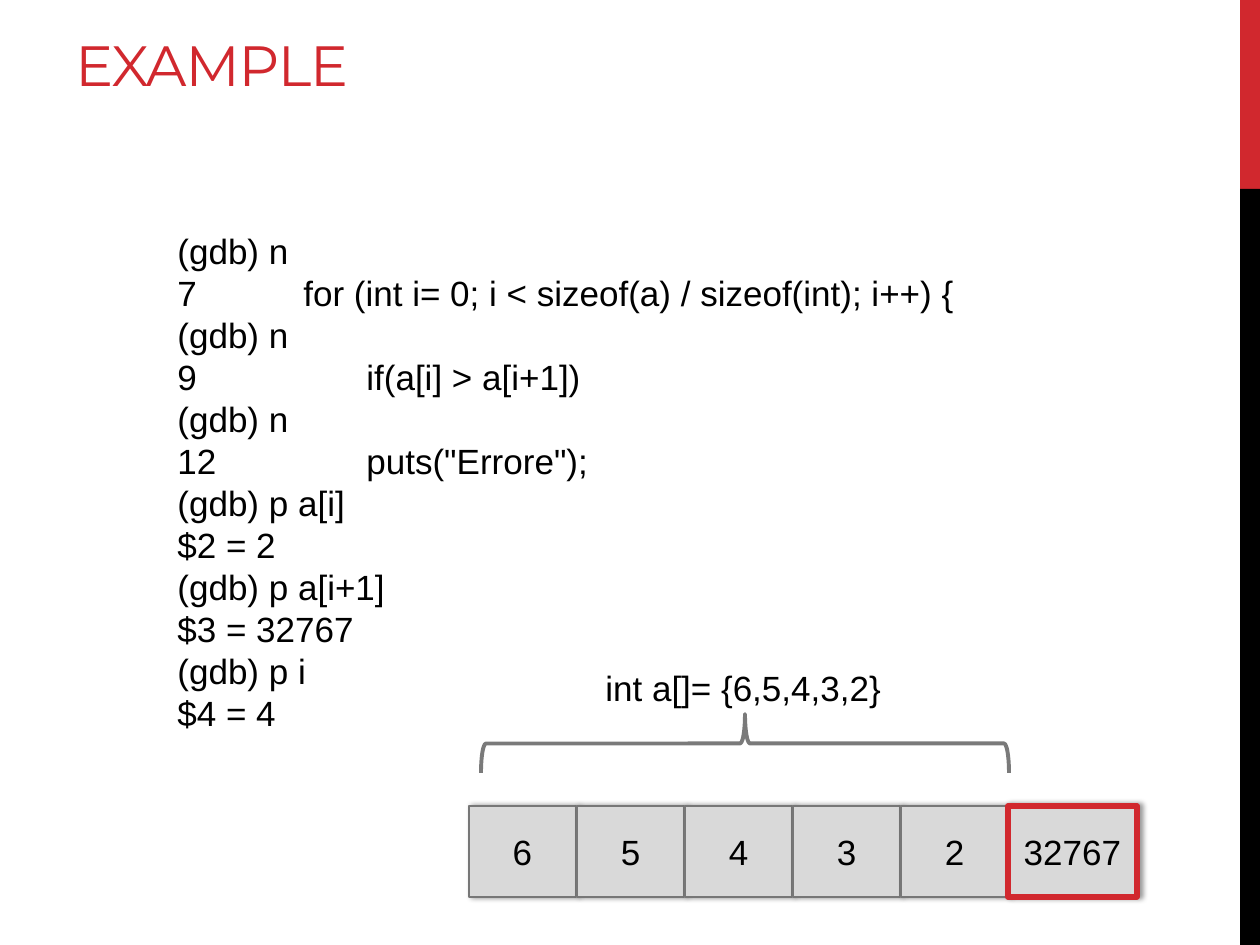
from lxml import etree
from pptx import Presentation
from pptx import util as u
from pptx.dml.color import RGBColor
from pptx.enum import shapes, text
from pptx.oxml import ns

RED = RGBColor(0xD1, 0x28, 0x2E)
BLACK = RGBColor(0x00, 0x00, 0x00)
CELL_FILL = RGBColor(0xD9, 0xD9, 0xD9)
CELL_LINE = RGBColor(0x77, 0x77, 0x77)
BRACE_LINE = RGBColor(0x7A, 0x7A, 0x7A)

PX_PER_INCH = 126


def px(n):
    return u.Emu(round(n * u.Inches(1) / PX_PER_INCH))


def write(tf, content, font="Arial", size=20, color=BLACK, align=text.PP_ALIGN.LEFT,
          anchor=text.MSO_ANCHOR.TOP, spacing=None):
    """Fill a text frame, one paragraph a line."""
    tf.word_wrap = True
    tf.vertical_anchor = anchor
    for i, line in enumerate(content.split("\n")):
        p = tf.paragraphs[0] if i == 0 else tf.add_paragraph()
        p.alignment = align
        r = p.add_run()
        r.text = line
        r.font.name = font
        r.font.size = u.Pt(size)
        r.font.color.rgb = color
        if spacing is not None:
            r.font._element.set("spc", str(round(spacing * 100)))


class Deck:
    """Style and current slide."""

    def __init__(self, width, height):
        self.prs = Presentation()
        self.prs.slide_width, self.prs.slide_height = px(width), px(height)
        self.s = self.prs.slides.add_slide(self.prs.slide_layouts[6])

    def shape(self, kind, x, y, w, h, fill=None, line=None, line_pt=1):
        sp = self.s.shapes.add_shape(kind, px(x), px(y), px(w), px(h))
        sp.shadow.inherit = False
        if fill is None:
            sp.fill.background()
        else:
            sp.fill.solid()
            sp.fill.fore_color.rgb = fill
        if line is None:
            sp.line.fill.background()
        else:
            sp.line.color.rgb = line
            sp.line.width = u.Pt(line_pt)
        return sp

    def bar(self, x, y, w, h, fill):
        return self.shape(shapes.MSO_SHAPE.RECTANGLE, x, y, w, h, fill)

    def text(self, x, y, w, h, content, **fmt):
        sp = self.s.shapes.add_textbox(px(x), px(y), px(w), px(h))
        write(sp.text_frame, content, **fmt)
        return sp

    def cell(self, x, y, w, h, value, line=CELL_LINE, line_pt=1):
        sp = self.shape(shapes.MSO_SHAPE.RECTANGLE, x, y, w, h, CELL_FILL, line, line_pt)
        self.drop_shadow(sp)
        write(sp.text_frame, value, align=text.PP_ALIGN.CENTER,
              anchor=text.MSO_ANCHOR.MIDDLE)
        return sp

    def brace(self, x, y, w, h):
        """Brace over the box x, y, w, h, pointing up."""
        sp = self.shape(shapes.MSO_SHAPE.LEFT_BRACE, x + (w - h) / 2, y + (h - w) / 2,
                        h, w, line=BRACE_LINE, line_pt=2.25)
        sp.rotation = 90
        return sp

    def drop_shadow(self, sp):
        effects = sp._element.spPr.find(ns.qn("a:effectLst"))
        outer = etree.SubElement(effects, ns.qn("a:outerShdw"), blurRad=str(u.Pt(3.1)),
                                 dist=str(u.Pt(1.8)), dir="0", rotWithShape="0")
        color = etree.SubElement(outer, ns.qn("a:srgbClr"), val=str(BLACK))
        etree.SubElement(color, ns.qn("a:alpha"), val="40000")


GDB_SESSION = """(gdb) n
7\t\tfor (int i= 0; i < sizeof(a) / sizeof(int); i++) {
(gdb) n
9\t\t\tif(a[i] > a[i+1])
(gdb) n
12\t\t\tputs("Errore");
(gdb) p a[i]
$2 = 2
(gdb) p a[i+1]
$3 = 32767
(gdb) p i
$4 = 4"""


def main():
    deck = Deck(1260, 945)

    # Side bars
    deck.bar(1240, 0, 20, 189, RED)
    deck.bar(1240, 189, 20, 756, BLACK)

    # Title and debugger session
    deck.text(63, 21, 1137, 83, "EXAMPLE", font="Montserrat", size=32.4, color=RED,
              anchor=text.MSO_ANCHOR.BOTTOM, spacing=-0.6)
    deck.text(165, 223, 936, 522, GDB_SESSION)

    # Array cells, then the value past the end
    left, top, pitch, height = 469, 806, 108, 91
    values = ["6", "5", "4", "3", "2"]
    for i, value in enumerate(values):
        deck.cell(left + i * pitch, top, pitch - 1, height, value)
    deck.cell(left + len(values) * pitch - 1, top, 129, height, "32767", RED, 3)

    # Brace and declaration
    deck.brace(481, 714, 528, 59)
    deck.text(593, 660, 305, 55, "int a[]= {6,5,4,3,2}")

    deck.prs.save("out.pptx")


if __name__ == "__main__":
    main()
